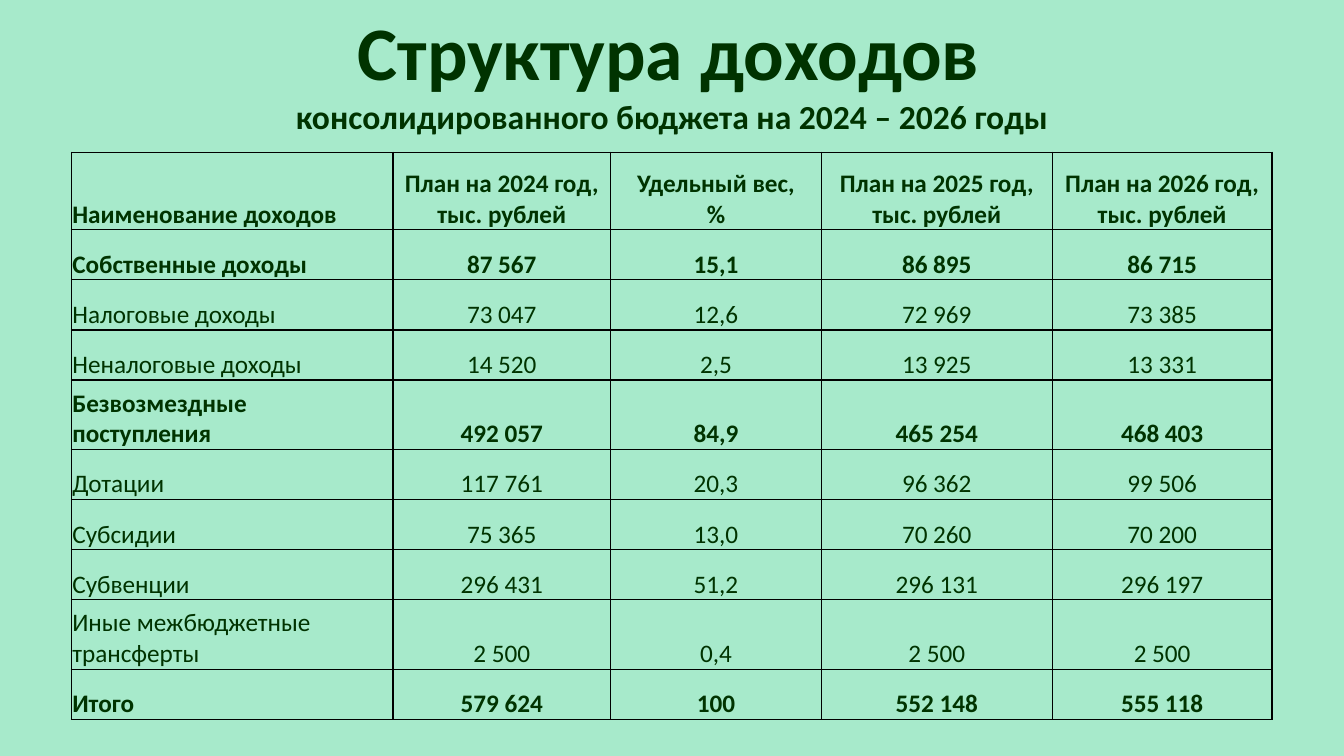
from dataclasses import dataclass

from lxml.etree import SubElement
from pptx import Presentation
from pptx.dml.color import RGBColor
from pptx.enum.shapes import MSO_SHAPE
from pptx.enum.text import MSO_ANCHOR, PP_ALIGN
from pptx.oxml import parse_xml
from pptx.oxml.ns import nsdecls
from pptx.util import Pt


@dataclass(frozen=True)
class Theme:
    font: str = "Calibri"
    background: str = "A7EACB"
    text: str = "003300"
    border: str = "000000"
    title: int = 54
    title_gap: int = 20
    subtitle: int = 24
    cell: int = 18


theme = Theme()
WIDTH, HEIGHT = 960, 540

HEADER = ["Наименование доходов", "План на 2024 год, тыс. рублей", "Удельный вес,\n%",
          "План на 2025 год, тыс. рублей", "План на 2026 год, тыс. рублей"]
INCOME = [
    ["Собственные доходы", "87 567", "15,1", "86 895", "86 715"],
    ["Налоговые доходы", "73 047", "12,6", "72 969", "73 385"],
    ["Неналоговые доходы", "14 520", "2,5", "13 925", "13 331"],
    ["Безвозмездные\nпоступления", "492 057", "84,9", "465 254", "468 403"],
    ["Дотации", "117 761", "20,3", "96 362", "99 506"],
    ["Субсидии", "75 365", "13,0", "70 260", "70 200"],
    ["Субвенции", "296 431", "51,2", "296 131", "296 197"],
    ["Иные межбюджетные трансферты", "2 500", "0,4", "2 500", "2 500"],
    ["Итого", "579 624", "100", "552 148", "555 118"],
]
ROWS = [HEADER] + INCOME
BOLD_ROWS = {0, 1, 4, 9}
COLUMN_WIDTHS = [229.7, 155.5, 150.5, 165, 157]
ROW_HEIGHT = 35.75
TALL_ROWS = {0: 55.4, 4: 49.8, 8: 49.8}


def add_run(p, text, size, bold=True):
    r = p.add_run()
    r.text = text
    font = {"name": theme.font, "size": Pt(size), "bold": bold}
    for name, value in font.items():
        setattr(r.font, name, value)
    r.font.color.rgb = RGBColor.from_string(theme.text)


def add_borders(cell):
    tc_pr = cell._tc.get_or_add_tcPr()
    for i, side in enumerate(["lnL", "lnR", "lnT", "lnB"]):
        line = parse_xml(f'<a:{side} {nsdecls("a")} w="{Pt(1)}"><a:solidFill/></a:{side}>')
        SubElement(line[0], line[0].tag.replace("solidFill", "srgbClr"), val=theme.border)
        tc_pr.insert(i, line)


prs = Presentation()
prs.slide_width, prs.slide_height = Pt(WIDTH), Pt(HEIGHT)
s = prs.slides.add_slide(prs.slide_layouts[6])

backdrop = s.shapes.add_shape(MSO_SHAPE.RECTANGLE, 0, 0, Pt(WIDTH), Pt(HEIGHT))
backdrop.shadow.inherit = False
backdrop.fill.solid()
backdrop.fill.fore_color.rgb = RGBColor.from_string(theme.background)
backdrop.line.fill.background()

tf = s.shapes.add_textbox(0, 0, Pt(WIDTH), Pt(101.5)).text_frame
tf.word_wrap = True
p = tf.paragraphs[0]
p.alignment = PP_ALIGN.CENTER
add_run(p, "Структура доходов", theme.title)
add_run(p, " ", theme.title_gap)
p = tf.add_paragraph()
p.alignment = PP_ALIGN.CENTER
add_run(p, "консолидированного бюджета на 2024 – 2026 годы", theme.subtitle)

heights = [TALL_ROWS.get(i, ROW_HEIGHT) for i in range(len(ROWS))]
table = s.shapes.add_table(len(ROWS), len(HEADER), Pt(51), Pt(108.8),
                           Pt(sum(COLUMN_WIDTHS)), Pt(sum(heights))).table
table.first_row = table.horz_banding = False
for column, width in zip(table.columns, COLUMN_WIDTHS):
    column.width = Pt(width)

cell_format = {"vertical_anchor": MSO_ANCHOR.BOTTOM, "margin_left": Pt(0.7),
               "margin_right": Pt(0.7), "margin_top": Pt(0.7), "margin_bottom": 0}
for row, values in enumerate(ROWS):
    table.rows[row].height = Pt(heights[row])
    for col, value in enumerate(values):
        cell = table.cell(row, col)
        for name, setting in cell_format.items():
            setattr(cell, name, setting)
        cell.fill.background()
        add_borders(cell)
        tf = cell.text_frame
        for i, line in enumerate(value.split("\n")):
            p = tf.add_paragraph() if i else tf.paragraphs[0]
            p.alignment = PP_ALIGN.CENTER if col else PP_ALIGN.LEFT
            add_run(p, line, theme.cell, row in BOLD_ROWS)

prs.save("out.pptx")
